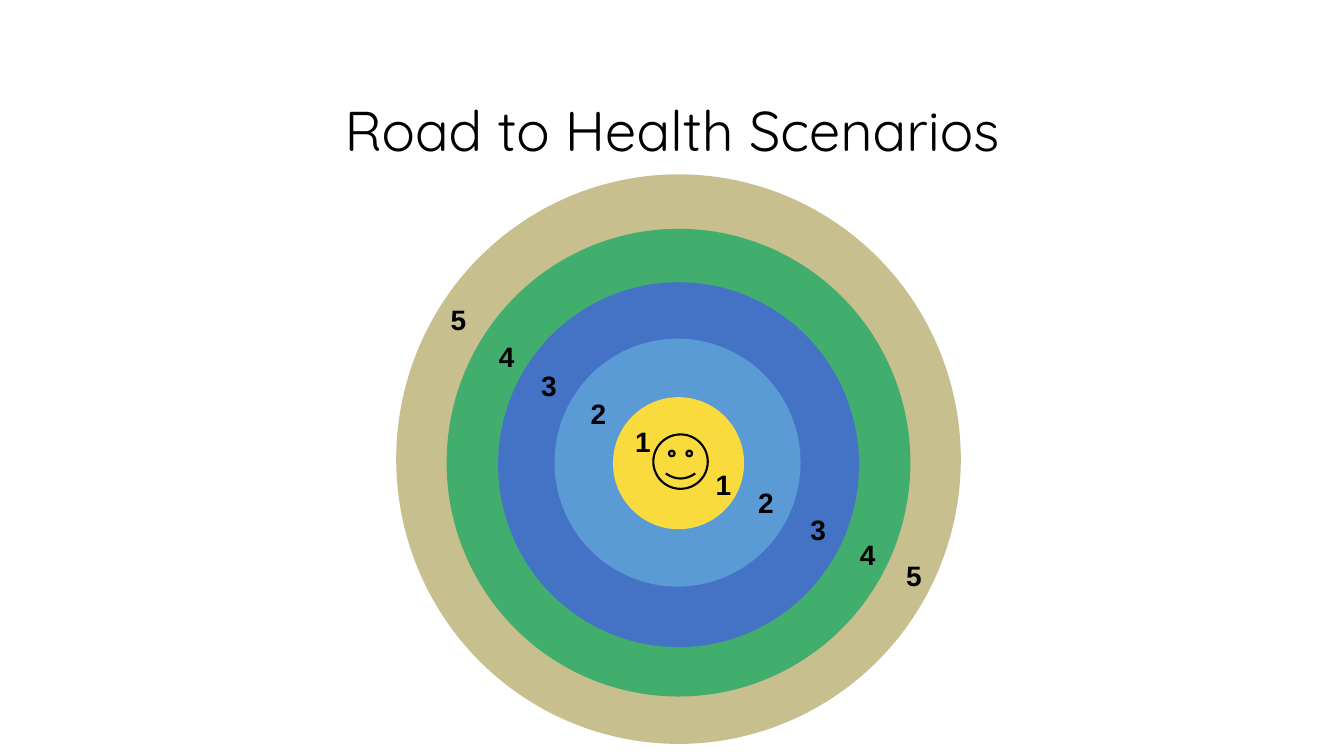
from pptx import Presentation
from pptx.dml.color import RGBColor
from pptx.enum.shapes import MSO_SHAPE
from pptx.enum.text import MSO_ANCHOR, PP_ALIGN
from pptx.util import Inches, Pt

OVAL = MSO_SHAPE.OVAL
SMILEY = MSO_SHAPE.SMILEY_FACE
TOP = MSO_ANCHOR.TOP
LEFT, CENTER = PP_ALIGN.LEFT, PP_ALIGN.CENTER

COLORS = {
    "black": "000000",
    "sand": "C8BF8F",
    "green": "42AE6D",
    "blue": "4472C4",
    "sky": "5B9BD5",
    "yellow": "F9DB3E",
}

RINGS = [
    (3.93, 1.73, 5.6, 5.65, "sand"),
    (4.43, 2.27, 4.6, 4.64, "green"),
    (4.94, 2.8, 3.58, 3.62, "blue"),
    (5.5, 3.36, 2.44, 2.46, "sky"),
    (6.08, 3.94, 1.3, 1.31, "yellow"),
]
LOWER_RIGHT = [(8.89, 5.44), (8.43, 5.23), (7.94, 4.98), (7.42, 4.72), (7, 4.54)]
UPPER_LEFT = [(4.37, 2.9), (4.85, 3.27), (5.27, 3.56), (5.76, 3.83), (6.2, 4.11)]


class SlideBuilder:
    def __init__(self, slide):
        self.slide = slide
        self.shapes = slide.shapes

    def color(self, name):
        return RGBColor.from_string(COLORS[name])

    def start_group(self):
        self.shapes = self.slide.shapes.add_group_shape().shapes

    def shape(self, kind, x, y, w, h, fill, line=None):
        s = self.shapes.add_shape(kind, Inches(x), Inches(y), Inches(w), Inches(h))
        s.shadow.inherit = False
        s.fill.solid()
        s.fill.fore_color.rgb = self.color(fill)
        if line:
            s.line.color.rgb = self.color(line)
            s.line.width = Pt(1.5)
        else:
            s.line.fill.background()
        return s

    def text(self, text, x, y, w, h, size, font, bold=False, align=LEFT,
             inset=0.1, spacing=1.0):
        box = self.shapes.add_textbox(Inches(x), Inches(y), Inches(w), Inches(h))
        tf = box.text_frame
        tf.word_wrap = True
        tf.vertical_anchor = TOP
        tf.margin_left = tf.margin_right = Inches(0.1)
        tf.margin_top = tf.margin_bottom = Inches(inset)
        p = tf.paragraphs[0]
        p.alignment = align
        p.line_spacing = spacing
        r = p.add_run()
        r.text = text
        r.font.size = Pt(size)
        r.font.name = font
        r.font.bold = bold
        r.font.color.rgb = self.color("black")


def main():
    prs = Presentation()
    prs.slide_width = Inches(13.33)
    prs.slide_height = Inches(7.5)
    builder = SlideBuilder(prs.slides.add_slide(prs.slide_layouts[6]))

    builder.text("Road to Health Scenarios", 2.53, 0.97, 8.27, 1.19, 40,
                 "Quicksand", align=CENTER, inset=0.05, spacing=0.9)

    builder.start_group()
    for x, y, w, h, fill in RINGS:
        builder.shape(OVAL, x, y, w, h, fill)
    builder.shape(SMILEY, 6.48, 4.31, 0.54, 0.54, "yellow", line="black")

    for side in (LOWER_RIGHT, UPPER_LEFT):
        for i, (x, y) in enumerate(side):
            builder.text(str(len(side) - i), x, y, 0.26, 0.37, 20, "Arial", bold=True)

    prs.save("out.pptx")


if __name__ == "__main__":
    main()
